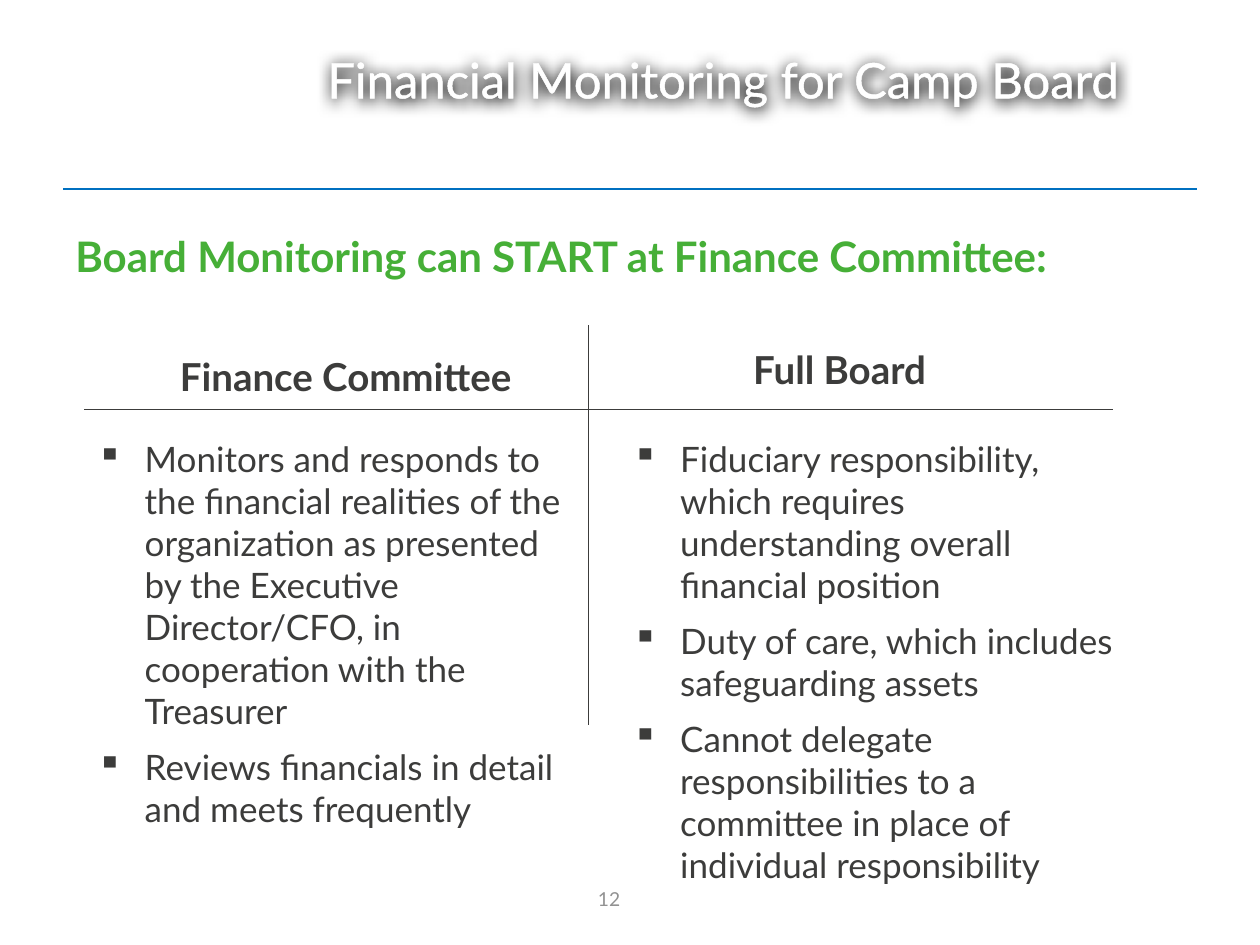
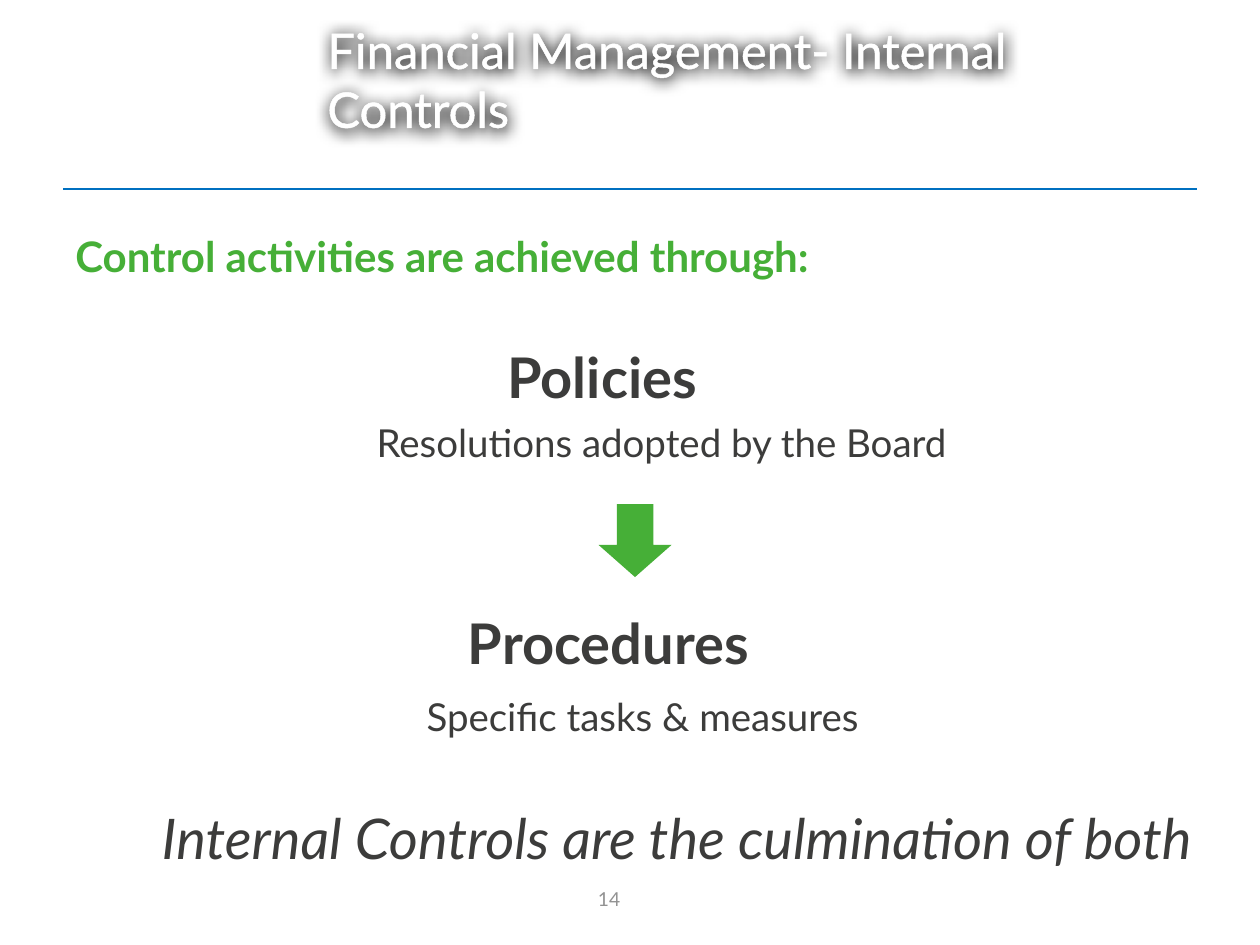
from lxml import etree
from pptx import Presentation
from pptx.dml.color import RGBColor
from pptx.enum.shapes import MSO_CONNECTOR, MSO_SHAPE
from pptx.enum.text import MSO_ANCHOR, PP_ALIGN
from pptx.oxml import parse_xml
from pptx.oxml.ns import nsdecls, qn
from pptx.util import Inches, Pt

STRAIGHT = MSO_CONNECTOR.STRAIGHT
DOWN_ARROW = MSO_SHAPE.DOWN_ARROW
TOP, MIDDLE, BOTTOM = MSO_ANCHOR.TOP, MSO_ANCHOR.MIDDLE, MSO_ANCHOR.BOTTOM
LEFT, CENTER = PP_ALIGN.LEFT, PP_ALIGN.CENTER

COLORS = {
    "rule": "0070C0",
    "green": "46AF37",
    "text": "3C3C3B",
    "muted": "929292",
    "white": "FFFFFF",
    "black": "000000",
}
FONT = "Lato"
FORMATS = {
    "title": {"size": 28, "color": "white"},
    "heading": {"size": 24, "color": "green", "bold": True},
    "number": {"size": 11, "color": "muted"},
    "column": {"size": 22, "color": "text", "bold": True},
    "bullet": {"size": 20, "color": "text"},
    "step": {"size": 32, "color": "text", "bold": True},
    "detail": {"size": 22, "color": "text"},
    "closing": {"size": 32, "color": "text", "italic": True},
}
BULLET_INDENT = Inches(0.38)


def rgb(name):
    return RGBColor.from_string(COLORS[name])


def apply_format(font, name):
    values = dict(FORMATS[name])
    font.color.rgb = rgb(values.pop("color"))
    values.update(name=FONT, size=Pt(values["size"]))
    for key, value in values.items():
        setattr(font, key, value)


def add_text(s, box, lines, fmt, align=LEFT, anchor=TOP):
    sp = s.shapes.add_textbox(*map(Inches, box))
    tf = sp.text_frame
    tf.word_wrap = True
    tf.vertical_anchor = anchor
    for i, line in enumerate(lines):
        p = tf.paragraphs[0] if i == 0 else tf.add_paragraph()
        p.alignment = align
        r = p.add_run()
        r.text = line
        apply_format(r.font, fmt)
    return sp


def add_line(s, x1, y1, x2, y2, color, width):
    line = s.shapes.add_connector(STRAIGHT, *map(Inches, (x1, y1, x2, y2)))
    line.line.color.rgb = rgb(color)
    line.line.width = Pt(width)
    etree.SubElement(line._element.spPr, qn("a:effectLst"))


def add_title(s, box, title):
    sp = add_text(s, box, [title], "title", anchor=MIDDLE)
    sp._element.spPr.append(parse_xml(
        f'<a:effectLst {nsdecls("a")}><a:outerShdw blurRad="{Pt(8.5)}" '
        f'dist="{Pt(1)}" dir="5400000" algn="t" rotWithShape="0">'
        f'<a:srgbClr val="{COLORS["black"]}"/></a:outerShdw></a:effectLst>'))
    font = sp.text_frame.paragraphs[0].runs[0].font
    font._element.insert(0, parse_xml(
        f'<a:ln {nsdecls("a")} w="{Pt(1.45)}"><a:solidFill>'
        f'<a:srgbClr val="{COLORS["white"]}"/></a:solidFill></a:ln>'))


def add_base(prs, title, heading, number):
    s = prs.slides.add_slide(prs.slide_layouts[6])
    add_line(s, 0.5, 1.5, 9.5, 1.5, "rule", 1.5)
    add_text(s, (3.67, 6.93, 2.33, 0.4), [number], "number", CENTER, MIDDLE)
    add_text(s, (0.5, 1.58, 9, 0.7), [heading], "heading", anchor=BOTTOM)
    add_title(s, (2.5, 0.15, 7, 0.95), title)
    return s


def add_bullets(s, box, items):
    sp = add_text(s, box, items, "bullet")
    for i, p in enumerate(sp.text_frame.paragraphs):
        if i:
            p.space_before = Pt(8)
        pPr = p._p.get_or_add_pPr()
        pPr.set("marL", str(BULLET_INDENT))
        pPr.set("indent", str(-BULLET_INDENT))
        etree.SubElement(pPr, qn("a:buChar"), char="▪")


def add_column(s, box, heading, heading_at, items):
    left, top, width, height = box
    dx, dy = heading_at
    add_text(s, (left + dx, top + dy, 3.4, 0.47), [heading], "column")
    add_bullets(s, box, items)


def add_comparison(s, box, columns):
    left, top, width, height = box
    add_line(s, left + 4, top, left + 4, top + height, "text", 0.75)
    add_line(s, left, top + 0.67, left + width, top + 0.67, "text", 0.75)
    for dx, column_width, heading, heading_at, items in columns:
        add_column(s, (left + dx, top + 0.84, column_width, 3.48),
                   heading, heading_at, items)


def add_step(s, box, name, name_shift, detail, detail_at):
    left, top, width, height = box
    dx, dy = detail_at
    add_text(s, (left + name_shift, top, width, height), [name], "step", CENTER)
    add_text(s, (left + dx, top + dy, width, 0.47), [detail], "detail", CENTER)


def add_flow(s, box):
    left, top, width, height = box
    add_step(s, (left, top, width, 0.64), "Policies", -0.22,
             "Resolutions adopted by the Board", (0.25, 0.61))
    add_step(s, (left, top + 2.11, width, 0.64), "Procedures", -0.17,
             "Specific tasks & measures", (0.1, 0.67))
    arrow = s.shapes.add_shape(DOWN_ARROW, Inches(left + 4.75), Inches(top + 1.33),
                               Inches(0.58), Inches(0.58))
    arrow.adjustments[0] = 0.5
    arrow.adjustments[1] = 0.44
    arrow.shadow.inherit = False
    arrow.fill.solid()
    arrow.fill.fore_color.rgb = rgb("green")
    arrow.line.fill.background()
    add_text(s, (left + 1, top + height - 0.64, 8.75, 0.64),
             ["Internal Controls are the culmination of both"], "closing", CENTER)


def monitoring_slide(prs):
    s = add_base(prs, "Financial Monitoring for Camp Board",
                 "Board Monitoring can START at Finance Committee:", "12")
    add_comparison(s, (0.67, 2.58, 8.16, 3.17), [
        (0, 3.92, "Finance Committee", (0.66, -0.67), [
            "Monitors and responds to the financial realities of the organization "
            "as presented by the Executive Director/CFO, in cooperation with the "
            "Treasurer",
            "Reviews financials in detail and meets frequently",
        ]),
        (4.25, 4.08, "Full Board", (0.96, -0.72), [
            "Fiduciary responsibility, which requires understanding overall "
            "financial position",
            "Duty of care, which includes safeguarding assets",
            "Cannot delegate responsibilities to a committee in place of "
            "individual responsibility",
        ]),
    ])


def controls_slide(prs):
    s = add_base(prs, "Financial Management- Internal Controls",
                 "Control activities are achieved through:", "14")
    add_flow(s, (0, 2.67, 10, 4.3))


def main():
    prs = Presentation()
    prs.slide_width = Inches(10)
    prs.slide_height = Inches(7.5)
    monitoring_slide(prs)
    controls_slide(prs)
    prs.save("out.pptx")


if __name__ == "__main__":
    main()
